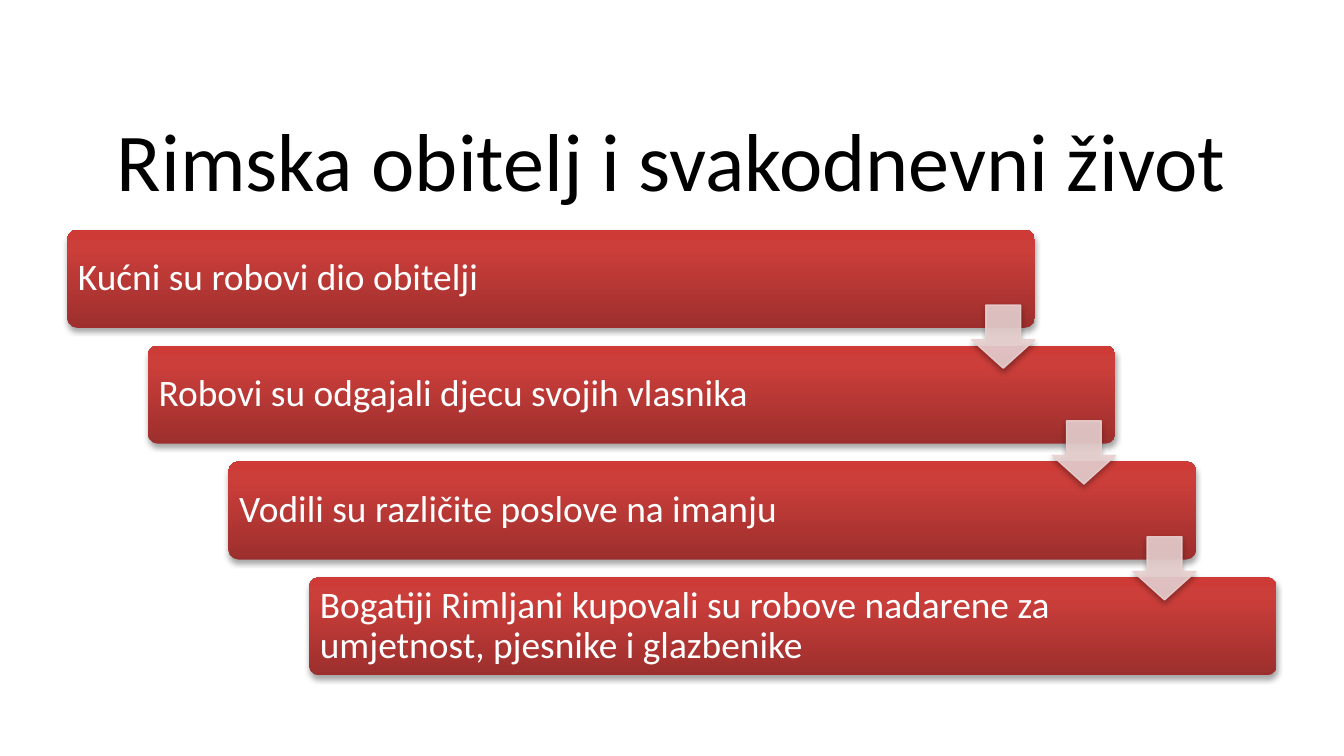
from copy import deepcopy
from dataclasses import dataclass

from lxml import etree
from pptx import Presentation
from pptx import util as u
from pptx.dml.color import RGBColor
from pptx.enum import shapes, text
from pptx.oxml import ns


@dataclass(frozen=True)
class Theme:
    font: str = "Calibri"
    title_size: int = 44
    step_size: int = 20
    ink: str = "000000"
    paper: str = "FFFFFF"
    arrow: str = "E8D0D0"
    arrow_opacity: int = 90
    shadow_opacity: int = 35
    gradient: tuple = ((0, "9C2F2D"), (0.8, "CB3E3A"), (1, "CE3B37"))


def add_xml(parent, tag, **attributes):
    return etree.SubElement(parent, ns.qn(tag), {k: str(v) for k, v in attributes.items()})


class Staircase:
    COLUMNS = 100
    ROWS = 56.25

    def __init__(self, theme):
        self.theme = theme
        self.deck = Presentation()
        self.deck.slide_width = u.Inches(10)
        self.deck.slide_height = u.Inches(5.625)
        self.page = self.deck.slides.add_slide(self.deck.slide_layouts[5])
        self.diagram = self.page.shapes.add_group_shape()

    def place(self, column, row, columns, rows):
        across = self.deck.slide_width / self.COLUMNS
        down = self.deck.slide_height / self.ROWS
        return [round(n) for n in (column * across, row * down, columns * across, rows * down)]

    def set_words(self, box, words, size, color, align):
        frame = box.text_frame
        frame.word_wrap = True
        frame.auto_size = text.MSO_AUTO_SIZE.NONE
        frame.vertical_anchor = text.MSO_ANCHOR.MIDDLE
        para = frame.paragraphs[0]
        para.alignment = align
        para.line_spacing = 0.9
        span = para.add_run()
        span.text = words
        span.font.name = self.theme.font
        span.font.size = u.Pt(size)
        span.font.color.rgb = RGBColor.from_string(color)
        return frame

    def title(self, words, *cells):
        box = self.page.shapes.title
        box.left, box.top, box.width, box.height = self.place(*cells)
        self.set_words(box, words, self.theme.title_size, self.theme.ink, text.PP_ALIGN.CENTER)

    def shape(self, kind, adjustments, *cells):
        shape = self.diagram.shapes.add_shape(kind, *self.place(*cells))
        for index, value in enumerate(adjustments):
            shape.adjustments[index] = value
        return shape

    def cast_shadow(self, shape):
        shape.shadow.inherit = False
        effects = shape._element.spPr.find(ns.qn("a:effectLst"))
        shadow = add_xml(effects, "a:outerShdw", blurRad=u.Pt(3.1), dist=u.Pt(1.8),
                         dir=90 * 60000, rotWithShape=0)
        color = add_xml(shadow, "a:srgbClr", val=self.theme.ink)
        add_xml(color, "a:alpha", val=self.theme.shadow_opacity * 1000)

    def bar(self, *cells):
        shape = self.shape(shapes.MSO_SHAPE.ROUNDED_RECTANGLE, [0.1], *cells)
        shape.line.fill.background()
        shape.fill.gradient()
        shape.fill.gradient_angle = 90
        stops = shape._element.spPr.find(ns.qn("a:gradFill")).find(ns.qn("a:gsLst"))
        stops.insert(1, deepcopy(stops[0]))
        for stop, (position, color) in zip(shape.fill.gradient_stops, self.theme.gradient):
            stop.position = position
            stop.color.rgb = RGBColor.from_string(color)
        self.cast_shadow(shape)

    def label(self, words, *cells):
        box = self.diagram.shapes.add_textbox(*self.place(*cells))
        frame = self.set_words(box, words, self.theme.step_size, self.theme.paper, text.PP_ALIGN.LEFT)
        frame.margin_left = frame.margin_right = u.Inches(0.08)
        frame.margin_top = frame.margin_bottom = u.Inches(0.08)

    def arrow(self, *cells):
        shape = self.shape(shapes.MSO_SHAPE.DOWN_ARROW, [0.55, 0.45], *cells)
        shape.line.width = u.Pt(0.75)
        for fill in (shape.fill, shape.line.fill):
            fill.solid()
            fill.fore_color.rgb = RGBColor.from_string(self.theme.arrow)
        for color in shape._element.spPr.iter(ns.qn("a:srgbClr")):
            add_xml(color, "a:alpha", val=self.theme.arrow_opacity * 1000)
        self.cast_shadow(shape)


STEPS = (
    ("Kućni su robovi dio obitelji", 63.9),
    ("Robovi su odgajali djecu svojih vlasnika", 61.2),
    ("Vodili su različite poslove na imanju", 61.2),
    ("Bogatiji Rimljani kupovali su robove nadarene za umjetnost, pjesnike i glazbenike", 61.2),
)
LEFT, TOP = 5, 17.1
STEP_RIGHT, STEP_DOWN = 6, 8.62
BAR_WIDTH, BAR_HEIGHT = 72, 7.3
ARROW_SIZE, ARROW_DROP = 4.7, 5.6


def main():
    stairs = Staircase(Theme())
    stairs.title("Rimska obitelj i svakodnevni život", 5, 8.4, 90, 7.8)
    corners = [(LEFT + i * STEP_RIGHT, TOP + i * STEP_DOWN) for i in range(len(STEPS))]
    for (column, row), (words, width) in zip(corners, STEPS):
        stairs.bar(column, row, BAR_WIDTH, BAR_HEIGHT)
        stairs.label(words, column, row, width, BAR_HEIGHT)
    for column, row in corners[:-1]:
        stairs.arrow(column + BAR_WIDTH - ARROW_SIZE, row + ARROW_DROP, ARROW_SIZE, ARROW_SIZE)
    stairs.deck.save("out.pptx")


if __name__ == "__main__":
    main()
